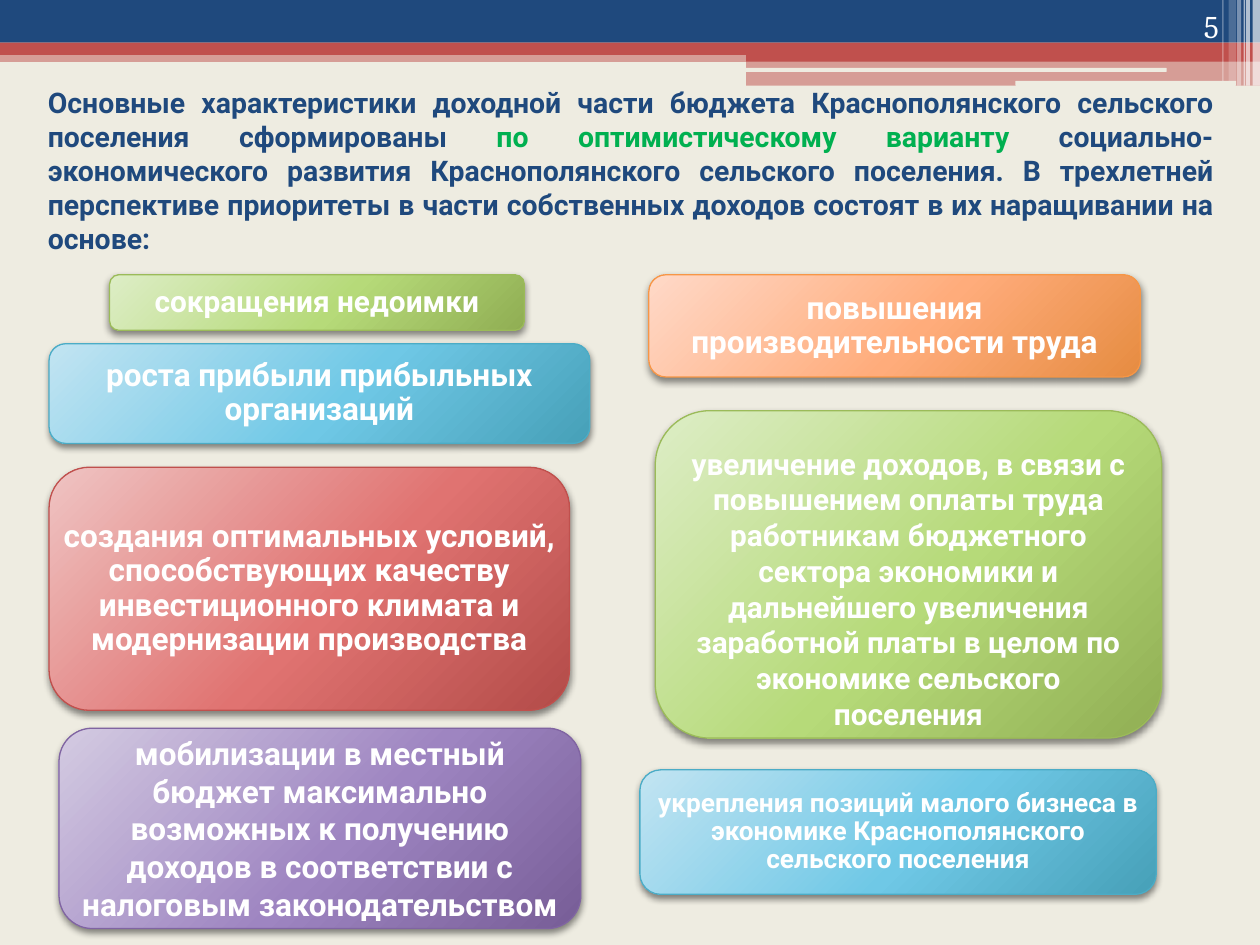
from pptx import Presentation
from pptx.dml.color import RGBColor
from pptx.enum.shapes import MSO_SHAPE
from pptx.enum.text import MSO_ANCHOR, MSO_AUTO_SIZE, PP_ALIGN
from pptx.oxml import parse_xml
from pptx.oxml.ns import nsdecls
from pptx.util import Cm, Pt

RECTANGLE, ROUNDED = MSO_SHAPE.RECTANGLE, MSO_SHAPE.ROUNDED_RECTANGLE
TOP, MIDDLE, BOTTOM = MSO_ANCHOR.TOP, MSO_ANCHOR.MIDDLE, MSO_ANCHOR.BOTTOM
CENTER, JUSTIFY, RIGHT = PP_ALIGN.CENTER, PP_ALIGN.JUSTIFY, PP_ALIGN.RIGHT
TITLE_ONLY = 5

NAVY, RED, CREAM, WHITE, ACCENT = "1F497D", "C0504D", "EEECE1", "FFFFFF", "00B050"

# Box palettes: gradient start, middle, end, then outline
GREEN = ("DDEDC6", "B6DA79", "90AE53", "9BBB59")
BLUE = ("C2E4F2", "6FC8E6", "46A0B8", "4BACC6")
ORANGE = ("FFD9C8", "FFAC7B", "E68C41", "F79646")
ROSE = ("EFC4C3", "E07371", "B34B48", "C0504D")
PURPLE = ("D4CBE2", "9E85C1", "775D97", "8064A2")

# Header bands: shape, position in cm, colour, opacity in percent
BANDS = [
    (RECTANGLE, (0, 1.02, 25.4, 0.23), RED, 50),
    (RECTANGLE, (0, 0, 25.4, 0.86), NAVY, 100),
    (RECTANGLE, (0, 0.86, 25.4, 0.25), RED, 100),
    (RECTANGLE, (15.04, 0.99, 10.36, 0.25), RED, 100),
    (RECTANGLE, (15.04, 1.22, 10.36, 0.51), RED, 50),
    (ROUNDED, (15.01, 1.37, 8.51, 0.08), CREAM, 100),
    (ROUNDED, (20.47, 1.63, 4.45, 0.1), CREAM, 100),
]
# Vertical stripes in the corner: left, width, height, opacity
STRIPES = [
    (25.25, 0.15, 1.73, 65), (25.12, 0.08, 1.73, 65), (25.07, 0.03, 1.73, 60),
    (24.94, 0.08, 1.73, 40), (24.77, 0.15, 1.63, 20), (24.64, 0.03, 1.63, 30),
]

TITLE_RUNS = [
    ("Основные характеристики доходной части бюджета Краснополянского сельского "
     "поселения сформированы ", NAVY),
    ("по оптимистическому варианту", ACCENT),
    (" социально-экономического развития Краснополянского сельского поселения. "
     "В трехлетней перспективе приоритеты в части собственных доходов состоят "
     "в их наращивании на основе:", NAVY),
]

# Revenue sources: text, position, palette, size, line spacing, frame changes
BOXES = [
    ("сокращения недоимки", (2.21, 5.54, 8.36, 1.12), GREEN, 17, 0.9, {}),
    ("роста прибыли прибыльных организаций",
     (0.99, 6.93, 10.9, 2.01), BLUE, 18, 0.9, {}),
    ("повышения производительности труда",
     (13.08, 5.54, 9.91, 2.06), ORANGE, 18, 0.9, {}),
    ("создания оптимальных условий, способствующих качеству инвестиционного "
     "климата и модернизации производства",
     (0.99, 9.42, 10.49, 4.9), ROSE, 18, 0.9,
     {"margin_left": 0, "margin_right": 0}),
    ("укрепления позиций малого бизнеса в экономике Краснополянского "
     "сельского поселения", (12.9, 15.52, 10.41, 2.51), BLUE, 15, 0.9, {}),
    ("увеличение доходов, в связи с повышением оплаты труда работникам бюджетного "
     "сектора экономики и дальнейшего увеличения заработной платы в целом по "
     "экономике сельского поселения",
     (13.21, 8.28, 10.21, 6.6), GREEN, 17, 1,
     {"vertical_anchor": TOP, "margin_top": Cm(0.38),
      "margin_left": Cm(0.25), "margin_right": Cm(0.25)}),
    ("мобилизации в местный бюджет максимально возможных к получению доходов "
     "в соответствии с налоговым законодательством",
     (1.19, 14.68, 10.52, 4.04), PURPLE, 18, 1, {}),
]


def color(value):
    return RGBColor.from_string(value)


def lengths(position):
    return [Cm(number) for number in position]


def apply(target, values):
    for name, value in values.items():
        setattr(target, name, value)


def write(shape, runs, frame, paragraph_format, font):
    """Fill one paragraph with (text, colour) runs."""
    text_frame = shape.text_frame
    apply(text_frame, {"word_wrap": True, "auto_size": MSO_AUTO_SIZE.NONE, **frame})
    paragraph = text_frame.paragraphs[0]
    apply(paragraph, paragraph_format)
    for text, run_color in runs:
        run = paragraph.add_run()
        run.text = text
        apply(run.font, font)
        run.font.color.rgb = color(run_color)


def add_band(slide, kind, position, fill, opacity):
    shape = slide.shapes.add_shape(kind, *lengths(position))
    shape.shadow.inherit = False
    shape.line.fill.background()
    shape.fill.solid()
    shape.fill.fore_color.rgb = color(fill)
    if opacity < 100:
        fill_color = shape.element.spPr.find(".//{*}srgbClr")
        fill_color.append(parse_xml(
            f'<a:alpha {nsdecls("a")} val="{opacity * 1000}"/>'))


def add_box(slide, text, position, palette, size, spacing, frame):
    shape = slide.shapes.add_shape(ROUNDED, *lengths(position))
    shape.line.color.rgb = color(palette[3])
    shape.line.width = Pt(0.75)

    # Radial gradient, placed right after the geometry
    stops = "".join(
        f'<a:gs pos="{place * 1000}"><a:srgbClr val="{value}"/></a:gs>'
        for place, value in zip((0, 55, 100), palette))
    properties = shape.element.spPr
    properties.find("{*}prstGeom").addnext(parse_xml(
        f'<a:gradFill {nsdecls("a")} rotWithShape="1"><a:gsLst>{stops}</a:gsLst>'
        '<a:path path="circle"><a:fillToRect l="-40000" t="-90000" '
        'r="140000" b="190000"/></a:path></a:gradFill>'))

    # Soft shadow below the box
    shape.shadow.inherit = False
    properties.find("{*}effectLst").append(parse_xml(
        f'<a:outerShdw {nsdecls("a")} blurRad="{Pt(4)}" dist="{Pt(2)}" '
        'dir="5400000" rotWithShape="0"><a:srgbClr val="000000">'
        '<a:alpha val="45000"/></a:srgbClr></a:outerShdw>'))

    margins = {"margin_left": Cm(0.18), "margin_right": Cm(0.18),
               "margin_top": Cm(0.1), "margin_bottom": Cm(0.1)}
    write(shape, [(text, WHITE)], {"vertical_anchor": MIDDLE, **margins, **frame},
          {"alignment": CENTER, "line_spacing": spacing},
          {"name": "Roboto", "size": Pt(size), "bold": True})


def set_title(slide):
    title = slide.shapes.title
    apply(title, dict(zip(("left", "top", "width", "height"),
                          lengths((0.71, 1.52, 24, 3.81)))))
    write(title, TITLE_RUNS, {"vertical_anchor": MIDDLE}, {"alignment": JUSTIFY},
          {"name": "Roboto", "size": Pt(16.2), "bold": True})
    # Bring the title in front of the header bands
    title.element.getparent().append(title.element)


def add_page_number(slide):
    number = slide.shapes.add_textbox(*lengths((22.71, 0, 2.11, 1.02)))
    write(number, [("5", WHITE)], {"vertical_anchor": BOTTOM}, {"alignment": RIGHT},
          {"name": "Cambria", "size": Pt(18)})


def main():
    presentation = Presentation()
    presentation.slide_width, presentation.slide_height = Cm(25.4), Cm(19.05)
    slide = presentation.slides.add_slide(presentation.slide_layouts[TITLE_ONLY])
    slide.background.fill.solid()
    slide.background.fill.fore_color.rgb = color(CREAM)

    # Header decoration
    for band in BANDS:
        add_band(slide, *band)
    for left, width, height, opacity in STRIPES:
        add_band(slide, RECTANGLE, (left, 0, width, height), WHITE, opacity)

    # Content
    set_title(slide)
    for box in BOXES:
        add_box(slide, *box)
    add_page_number(slide)
    presentation.save("out.pptx")


if __name__ == "__main__":
    main()
